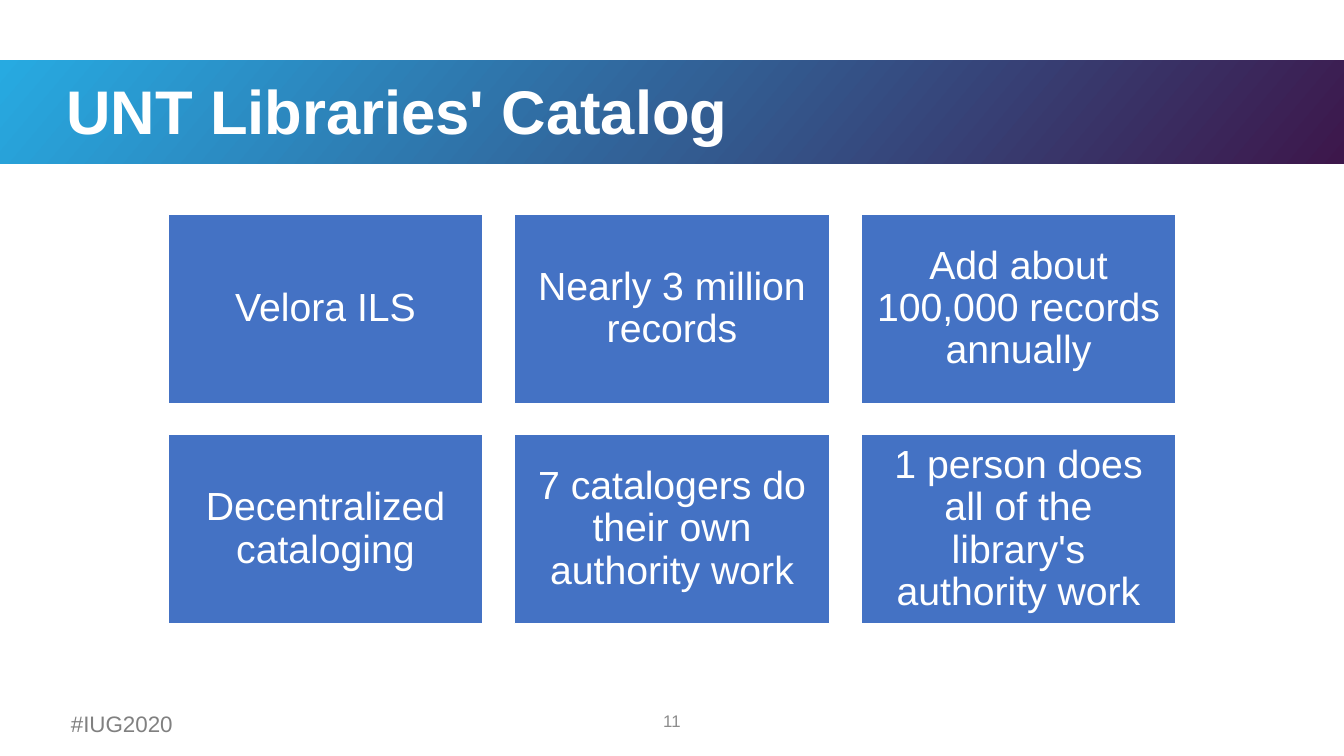
from pptx import Presentation
from pptx.dml.color import RGBColor
from pptx.enum.shapes import MSO_SHAPE
from pptx.enum.text import MSO_ANCHOR, PP_ALIGN
from pptx.util import Pt

WHITE = RGBColor(0xFF, 0xFF, 0xFF)
SKY = RGBColor(0x27, 0xAA, 0xE1)
PLUM = RGBColor(0x3D, 0x17, 0x4B)
BLUE = RGBColor(0x44, 0x72, 0xC4)
GREY = RGBColor(0x80, 0x80, 0x80)
LIGHT_GREY = RGBColor(0x8C, 0x8C, 0x8C)

FACTS = [
    "Velora ILS",
    "Nearly 3 million records",
    "Add about 100,000 records annually",
    "Decentralized cataloging",
    "7 catalogers do their own authority work",
    "1 person does all of the library's authority work",
]
COLUMNS = 3


def write_text(shape, text, size, color, bold=False, align=PP_ALIGN.CENTER,
               anchor=MSO_ANCHOR.MIDDLE, spacing=1.0, inset=None):
    """Fill a shape with one formatted paragraph."""
    frame = shape.text_frame
    frame.word_wrap = True
    frame.vertical_anchor = anchor
    if inset is not None:
        frame.margin_left = frame.margin_right = Pt(inset)
        frame.margin_top = frame.margin_bottom = Pt(inset)
    para = frame.paragraphs[0]
    para.alignment = align
    para.line_spacing = spacing
    span = para.add_run()
    span.text = text
    span.font.name = "Arial"
    span.font.size = Pt(size)
    span.font.bold = bold
    span.font.color.rgb = color


def add_header(page, left, top, width, height):
    """Draw the gradient band with the title on it."""
    band = page.shapes.add_shape(MSO_SHAPE.RECTANGLE, Pt(left), Pt(top), Pt(width), Pt(height))
    band.shadow.inherit = False
    band.line.fill.background()
    band.fill.gradient()
    band.fill.gradient_angle = 320
    for stop, color, position in zip(band.fill.gradient_stops, (SKY, PLUM), (0, 1)):
        stop.color.rgb = color
        stop.position = position

    title = page.shapes.title
    title.element.getparent().append(title.element)
    title.left, title.top = Pt(left + 40.3), Pt(top + 10)
    title.width, title.height = Pt(872.6), Pt(57.6)
    write_text(title, "UNT Libraries' Catalog", size=44, color=WHITE, bold=True,
               align=PP_ALIGN.LEFT, spacing=0.9)


def add_fact_grid(page, left, top, width):
    """Lay out the facts as tiles whose gap is a tenth of their width."""
    tile_width = width / (COLUMNS + 0.1 * (COLUMNS - 1))
    tile_height = 0.6 * tile_width
    gap = 0.1 * tile_width
    for index, fact in enumerate(FACTS):
        row, column = divmod(index, COLUMNS)
        tile = page.shapes.add_shape(
            MSO_SHAPE.RECTANGLE,
            Pt(left + column * (tile_width + gap)), Pt(top + row * (tile_height + gap)),
            Pt(tile_width), Pt(tile_height))
        tile.shadow.inherit = False
        tile.fill.solid()
        tile.fill.fore_color.rgb = BLUE
        tile.line.color.rgb = WHITE
        tile.line.width = Pt(1)
        write_text(tile, fact, size=28, color=WHITE, spacing=0.9, inset=8.4)


def add_footer(page, left, top, width):
    """Place the hashtag and the centred page number."""
    hashtag = page.shapes.add_textbox(Pt(left), Pt(top + 3.6), Pt(174), Pt(26.6))
    write_text(hashtag, "#IUG2020", size=16, color=GREY, anchor=MSO_ANCHOR.TOP)
    number = page.shapes.add_textbox(Pt(left + (width - 216) / 2), Pt(top), Pt(216), Pt(28.8))
    write_text(number, "11", size=12, color=LIGHT_GREY)


def main():
    """Build and save the deck."""
    deck = Presentation()
    deck.slide_width, deck.slide_height = Pt(960), Pt(540)
    page = deck.slides.add_slide(deck.slide_layouts[5])
    add_header(page, left=0, top=43.2, width=960, height=73.5)
    add_fact_grid(page, left=120, top=153, width=720)
    add_footer(page, left=0, top=500.4, width=960)
    deck.save("out.pptx")


if __name__ == "__main__":
    main()
